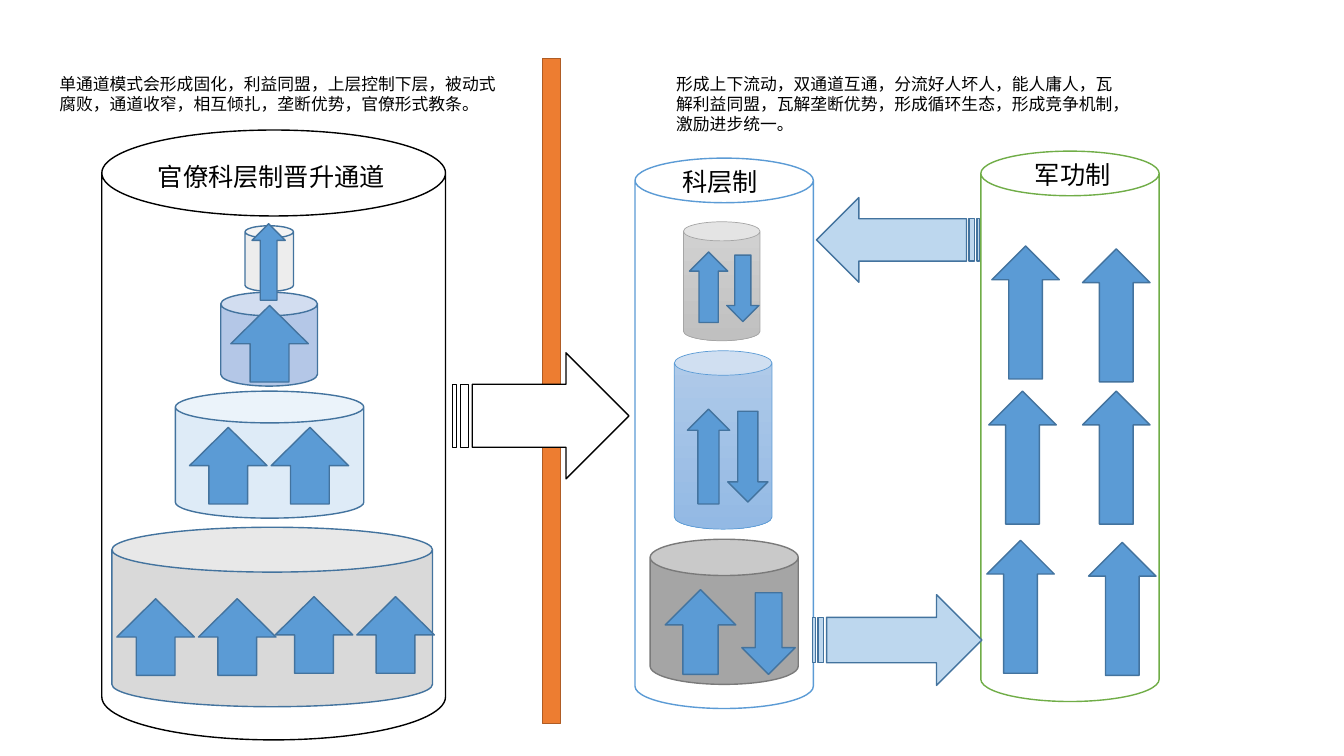
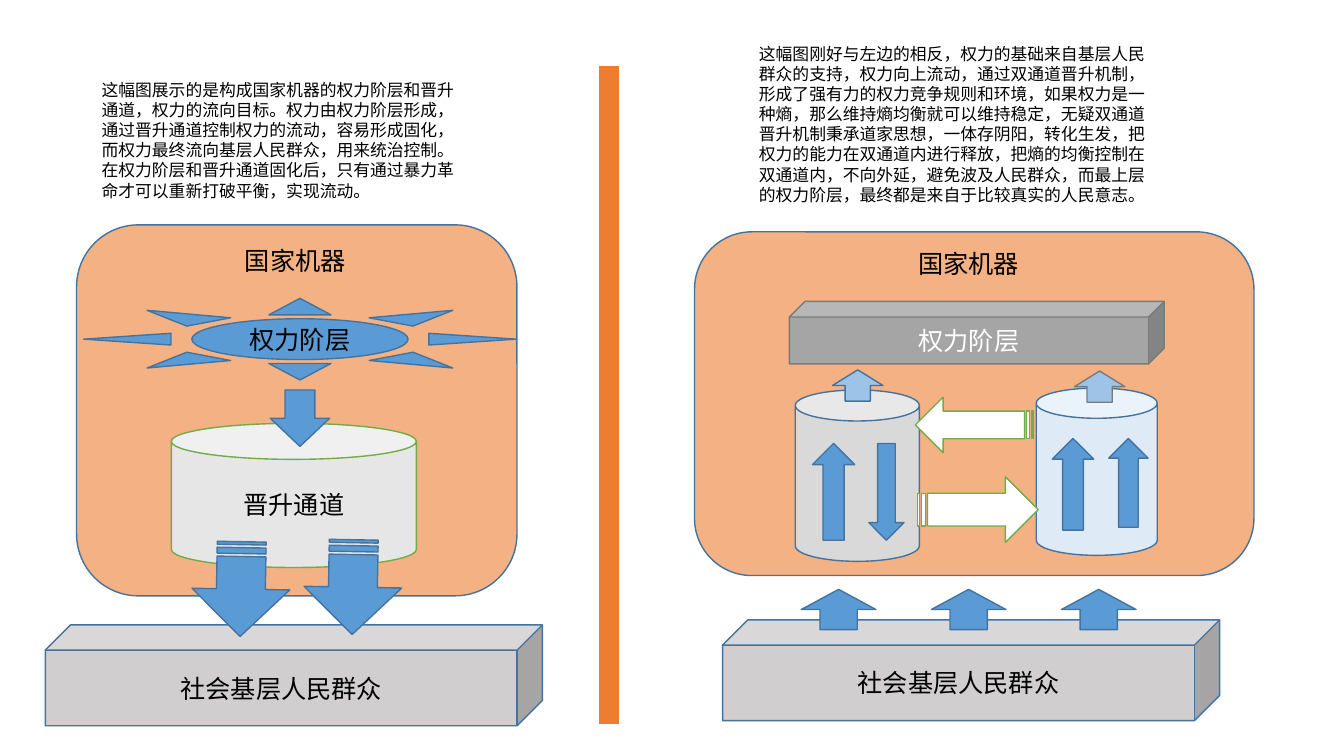
from pptx import Presentation
from pptx.dml.color import RGBColor
from pptx.enum.shapes import MSO_SHAPE
from pptx.enum.text import MSO_ANCHOR, MSO_AUTO_SIZE, PP_ALIGN
from pptx.util import Pt

COLORS = {
    "black": "000000", "white": "FFFFFF", "blue": "5B9BD5", "navy": "43739E",
    "pale_blue": "DEEBF7", "light_blue": "BDD7EE", "mid_blue": "9DC3E6",
    "lavender": "B4C7E7", "green": "70AD47", "orange": "ED7D31",
    "rust": "AF5C24", "peach": "F4B183", "gray": "A5A5A5",
    "dark_gray": "7A7A7A", "silver": "D9D9D9", "mist": "EDEDED",
    "stone": "D0CECE", "ash": "E7E6E6",
    "blue_top": "B1CBE9", "blue_bottom": "93B9E4",
    "gray_top": "D2D2D2", "gray_bottom": "C0C0C0",
}
FONT = "Calibri"
LABEL, NOTE = 18, 12


def rgb(name):
    return RGBColor.from_string(COLORS[name])


class Deck:
    def __init__(self):
        self.prs = Presentation()
        self.prs.slide_width, self.prs.slide_height = Pt(960), Pt(540)
        self.s = None

    def new_slide(self):
        self.s = self.prs.slides.add_slide(self.prs.slide_layouts[6])

    def run(self, p, text, size, color="black"):
        r = p.add_run()
        r.text = text
        r.font.name, r.font.size = FONT, Pt(size)
        r.font.color.rgb = rgb(color)

    def text(self, x, y, w, h, text, size=LABEL):
        tf = self.s.shapes.add_textbox(Pt(x), Pt(y), Pt(w), Pt(h)).text_frame
        tf.word_wrap = True
        tf.auto_size = MSO_AUTO_SIZE.SHAPE_TO_FIT_TEXT
        self.run(tf.paragraphs[0], text, size)

    def shape(self, kind, x, y, w, h, fill="blue", line="navy", width=1,
              text=None, color="black"):
        """Add a preset shape; a pair of fills makes a top-to-bottom gradient."""
        sp = self.s.shapes.add_shape(kind, Pt(x), Pt(y), Pt(w), Pt(h))
        sp.shadow.inherit = False
        if isinstance(fill, tuple):
            sp.fill.gradient()
            sp.fill.gradient_angle = 270
            for stop, name in zip(sp.fill.gradient_stops, fill):
                stop.color.rgb = rgb(name)
        else:
            sp.fill.solid()
            sp.fill.fore_color.rgb = rgb(fill)
        sp.line.color.rgb = rgb(line)
        sp.line.width = Pt(width)
        if text:
            tf = sp.text_frame
            tf.word_wrap = True
            tf.vertical_anchor = MSO_ANCHOR.MIDDLE
            p = tf.paragraphs[0]
            p.alignment = PP_ALIGN.CENTER
            self.run(p, text, LABEL, color)
        return sp

    def can(self, *box, **style):
        self.shape(MSO_SHAPE.CAN, *box, **style)

    def up(self, *box, **style):
        self.shape(MSO_SHAPE.UP_ARROW, *box, **style)

    def down(self, *box):
        self.shape(MSO_SHAPE.DOWN_ARROW, *box)

    def striped(self, *box, turn=0, **style):
        sp = self.shape(MSO_SHAPE.STRIPED_RIGHT_ARROW, *box, **style)
        sp.rotation = turn

    def divider(self, *box, line, width=1):
        self.shape(MSO_SHAPE.RECTANGLE, *box, fill="orange", line=line, width=width)

    def machine(self, *box):
        self.shape(MSO_SHAPE.ROUNDED_RECTANGLE, *box, fill="peach")

    def people(self, x, y):
        self.shape(MSO_SHAPE.CUBE, x, y, 355, 72, fill="stone", text="社会基层人民群众")


def channels_slide(d):
    d.new_slide()
    # Single channel
    d.can(72.7, 92.9, 245.5, 435.6, fill="white", line="black")
    d.text(105.8, 111.6, 192.2, 30.2, "官僚科层制晋升通道")
    for *box, fill in ((79.9, 376.6, 229, 128.2, "silver"),
                       (125.3, 279.4, 134.6, 90.7, "pale_blue"),
                       (157.7, 208.8, 69.1, 67, "lavender"),
                       (175, 161.3, 34.6, 46.8, "mist")):
        d.can(*box, fill=fill)
    for x, y in ((83.5, 427.7), (141.8, 427.7), (196.6, 426.2), (254.9, 426.2),
                 (135.4, 305.3), (193.7, 305.3), (164.9, 218.2)):
        d.up(x, y, 55.4, 54.7)
    d.up(180, 159.8, 23.8, 54.7)
    d.divider(387.4, 41.8, 13, 475.2, line="rust")

    # Double channel
    for x, y, line in ((700.6, 108, "green"), (453.6, 113, "blue")):
        d.can(x, y, 127.4, 393.1, fill="white", line=line)
    d.can(464.4, 385.2, 105.8, 103.7, fill="gray", line="dark_gray")
    d.can(481.7, 250.6, 69.8, 127.4, fill=("blue_top", "blue_bottom"),
          line="blue", width=0.5)
    d.can(488.2, 158.4, 54.7, 85, fill=("gray_top", "gray_bottom"),
          line="gray", width=0.5)
    for rise, fall in (((475.2, 421.2, 50.4, 60.5), (529.9, 423.4, 38.2, 58.3)),
                       ((491, 292.3, 30.2, 67.7), (519.8, 293.8, 28.8, 64.8)),
                       ((492.5, 180, 27.4, 50.4), (519.1, 182.2, 23, 47.5))):
        d.up(*rise)
        d.down(*fall)
    for x, y in ((708.5, 175.7), (773.3, 177.8), (706.3, 279.4),
                 (773.3, 279.4), (704.9, 385.9), (777.6, 387.4)):
        d.up(x, y, 48.2, 95)
    d.striped(580.3, 424.8, 121, 64.8, fill="light_blue")
    d.striped(583.2, 141.1, 116.6, 60.5, turn=180, fill="light_blue")
    d.text(480.2, 115.2, 82, 30.2, "科层制")
    d.text(732.2, 110.2, 75.6, 30.2, "军功制")
    d.striped(323.3, 252, 126, 90, fill="white", line="black")
    d.text(35.3, 49, 326.2, 36.7,
           "单通道模式会形成固化，利益同盟，上层控制下层，被动式腐败，通道收窄，"
           "相互倾扎，垄断优势，官僚形式教条。", NOTE)
    d.text(475.9, 49, 332.6, 51.1,
           "形成上下流动，双通道互通，分流好人坏人，能人庸人，瓦解利益同盟，"
           "瓦解垄断优势，形成循环生态，形成竞争机制，激励进步统一。", NOTE)


def power_slide(d):
    d.new_slide()
    # Power flowing down
    d.machine(54.7, 160.6, 314.6, 265)
    d.people(32.4, 446.4)
    d.can(122.4, 302.4, 175, 103, fill="ash", line="green", text="晋升通道")
    for x, y in ((218.2, 384.5), (138.2, 385.9)):
        d.striped(x, y, 67.7, 69.8, turn=91)
    d.shape(MSO_SHAPE.SUN, 59.8, 213.1, 308.9, 58.3, text="权力阶层")
    d.down(193, 278.6, 42.5, 40.3)
    d.text(167.8, 171.4, 92.2, 30.2, "国家机器")
    d.divider(427, 46.1, 15.8, 471.6, line="white", width=1.5)

    # Power flowing up
    d.people(516.2, 442.8)
    d.machine(496.1, 165.6, 399.6, 245.5)
    d.can(568.1, 278.6, 88.6, 122.4, fill="silver")
    d.can(740.2, 277.2, 86.4, 119.5, fill="pale_blue")
    d.up(580.3, 316.8, 30.2, 69.1)
    d.down(620.6, 316.8, 25.2, 69.1)
    d.up(751.7, 313.2, 29.5, 65.5)
    d.up(792, 313.2, 28.1, 63.4)
    d.striped(655.2, 340.6, 86.4, 46.8, fill="white", line="green")
    d.striped(653.8, 283.7, 84.2, 39.6, turn=180, fill="white", line="green")
    d.shape(MSO_SHAPE.CUBE, 563.8, 215.3, 267.8, 44.6, fill="gray",
            line="dark_gray", text="权力阶层", color="white")
    for x, y, line in ((767.5, 265, "dark_gray"), (594.7, 264.2, "navy")):
        d.up(x, y, 36, 22.3, fill="mid_blue", line=line)
    d.text(648.7, 173.5, 93.6, 30.2, "国家机器")
    for i in range(3):
        d.up(572.4 + 92.9 * i, 421, 53.3, 28.8)
    d.text(65.5, 53.3, 272.2, 94.3,
           "这幅图展示的是构成国家机器的权力阶层和晋升通道，权力的流向目标。"
           "权力由权力阶层形成，通过晋升通道控制权力的流动，容易形成固化，"
           "而权力最终流向基层人民群众，用来统治控制。在权力阶层和晋升通道固化后，"
           "只有通过暴力革命才可以重新打破平衡，实现流动。", NOTE)
    d.text(535, 27.4, 301, 123.1,
           "这幅图刚好与左边的相反，权力的基础来自基层人民群众的支持，权力向上流动，"
           "通过双通道晋升机制，形成了强有力的权力竞争规则和环境，如果权力是一种熵，"
           "那么维持熵均衡就可以维持稳定，无疑双通道晋升机制秉承道家思想，一体存阴阳，"
           "转化生发，把权力的能力在双通道内进行释放，把熵的均衡控制在双通道内，"
           "不向外延，避免波及人民群众，而最上层的权力阶层，"
           "最终都是来自于比较真实的人民意志。", NOTE)


def main():
    d = Deck()
    channels_slide(d)
    power_slide(d)
    d.prs.save("out.pptx")


if __name__ == "__main__":
    main()
